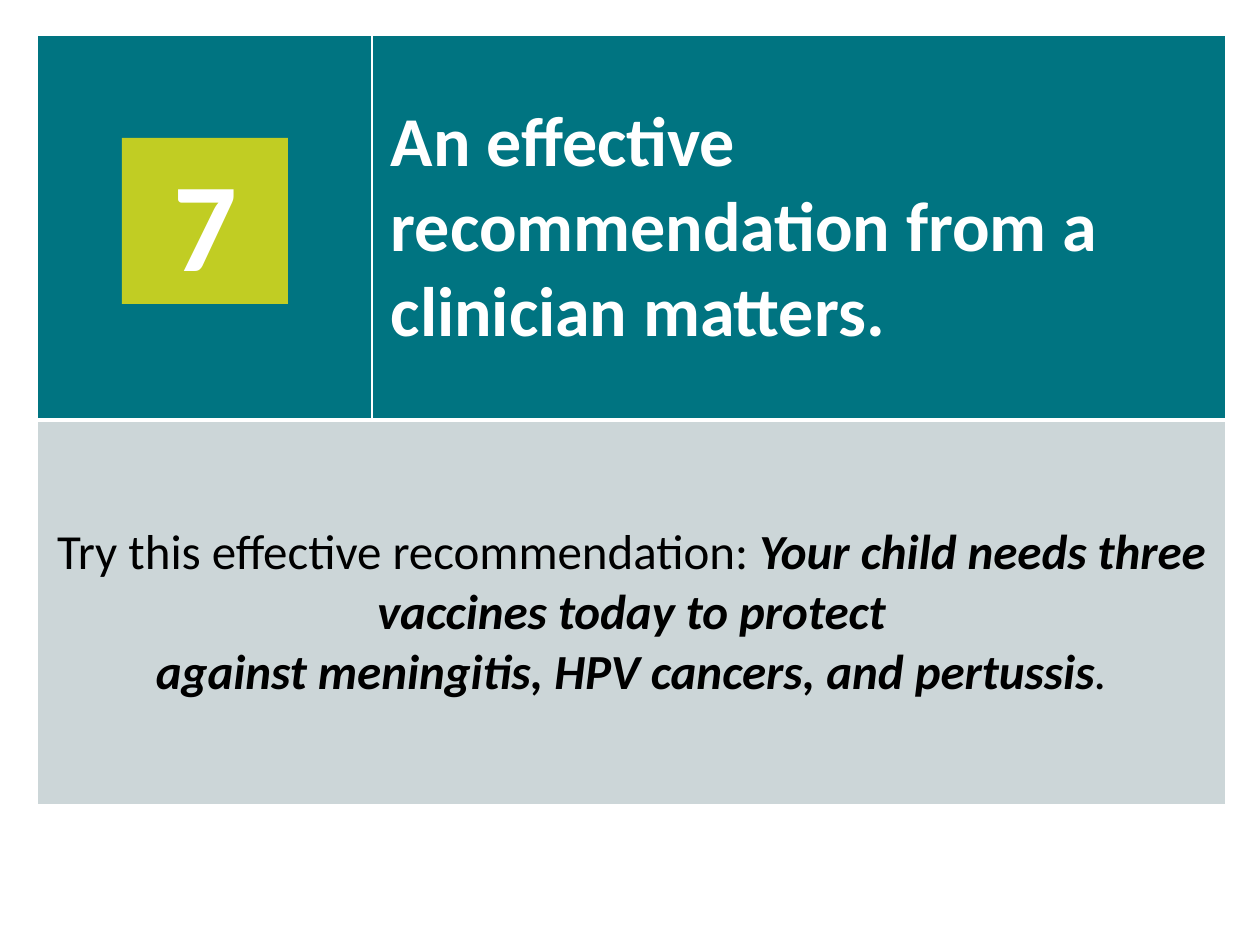
from lxml import etree
from pptx import Presentation
from pptx import util as u
from pptx.dml.color import RGBColor
from pptx.enum import shapes, text
from pptx.oxml.ns import qn

COLORS = {"teal": "007481", "lime": "C1CD23", "gray": "CCD6D8",
          "white": "FFFFFF", "black": "000000"}
FONT = "Calibri"
HEADING = {"size": u.Pt(40), "bold": True}
NUMBER = {"size": u.Pt(72), "bold": True}
BODY = {"size": u.Pt(28), "bold": False}
QUOTE = {"size": u.Pt(28), "bold": True, "italic": True}
QUOTE_END = {"size": u.Pt(28), "bold": False, "italic": True}


def px(value):
    return u.Emu(round(value * 914400 / 126))


def color(name):
    return RGBColor.from_string(COLORS[name])


def write(paragraph, runs, color_name, align=text.PP_ALIGN.LEFT):
    paragraph.alignment = align
    for words, style in runs:
        run = paragraph.add_run()
        run.text = words
        run.font.name = FONT
        run.font.color.rgb = color(color_name)
        for name, value in style.items():
            setattr(run.font, name, value)


def style_cell(cell, fill, borders):
    """Fill a cell and give it white borders; borders maps side to points."""
    cell.fill.solid()
    cell.fill.fore_color.rgb = color(fill)
    cell.vertical_anchor = text.MSO_ANCHOR.MIDDLE
    for side in ("left", "right", "top", "bottom"):
        setattr(cell, f"margin_{side}", u.Inches(0.15))
    properties = cell._tc.get_or_add_tcPr()
    for index, side in enumerate(side for side in "LRTB" if side in borders):
        line = etree.Element(qn(f"a:ln{side}"), w=str(u.Pt(borders[side])))
        solid = etree.SubElement(line, qn("a:solidFill"))
        etree.SubElement(solid, qn("a:srgbClr"), val=COLORS["white"])
        properties.insert(index, line)


def add_message_table(slide, left, top, width, height):
    """Heading row above a merged row with the suggested wording."""
    frame = slide.shapes.add_table(2, 2, px(left), px(top), px(width), px(height))
    table = frame.table
    number_width = 335
    table.columns[0].width = px(number_width)
    table.columns[1].width = px(width - number_width)

    # Heading row
    style_cell(table.cell(0, 0), "teal", {"L": 1, "T": 1, "B": 3})
    heading = table.cell(0, 1)
    style_cell(heading, "teal", {"R": 1, "T": 1, "B": 3})
    write(heading.text_frame.paragraphs[0],
          [("An effective recommendation from a clinician matters.", HEADING)], "white")

    # Suggested wording
    advice = table.cell(1, 0)
    advice.merge(table.cell(1, 1))
    style_cell(advice, "gray", {"L": 1, "R": 1, "T": 3, "B": 1})
    center = text.PP_ALIGN.CENTER
    write(advice.text_frame.paragraphs[0],
          [("Try this effective recommendation: ", BODY),
           ("Your child needs three vaccines today to protect", QUOTE)], "black", center)
    write(advice.text_frame.add_paragraph(),
          [("against meningitis, HPV cancers, and pertussis", QUOTE),
           (".", QUOTE_END)], "black", center)


def add_number_box(slide, left, top, width, height):
    """Square badge with the number of the message."""
    box = slide.shapes.add_shape(shapes.MSO_SHAPE.RECTANGLE,
                                 px(left), px(top), px(width), px(height))
    box.shadow.inherit = False
    box.fill.solid()
    box.fill.fore_color.rgb = color("lime")
    box.line.fill.background()
    frame = box.text_frame
    frame.word_wrap = True
    frame.auto_size = text.MSO_AUTO_SIZE.SHAPE_TO_FIT_TEXT
    frame.vertical_anchor = text.MSO_ANCHOR.MIDDLE
    write(frame.paragraphs[0], [("7", NUMBER)], "white", text.PP_ALIGN.CENTER)


def main():
    presentation = Presentation()
    presentation.slide_width, presentation.slide_height = px(1260), px(945)
    slide = presentation.slides.add_slide(presentation.slide_layouts[6])
    add_message_table(slide, 37, 35, 1189, 770)
    add_number_box(slide, 122, 138, 166, 166)
    presentation.save("out.pptx")


if __name__ == "__main__":
    main()
